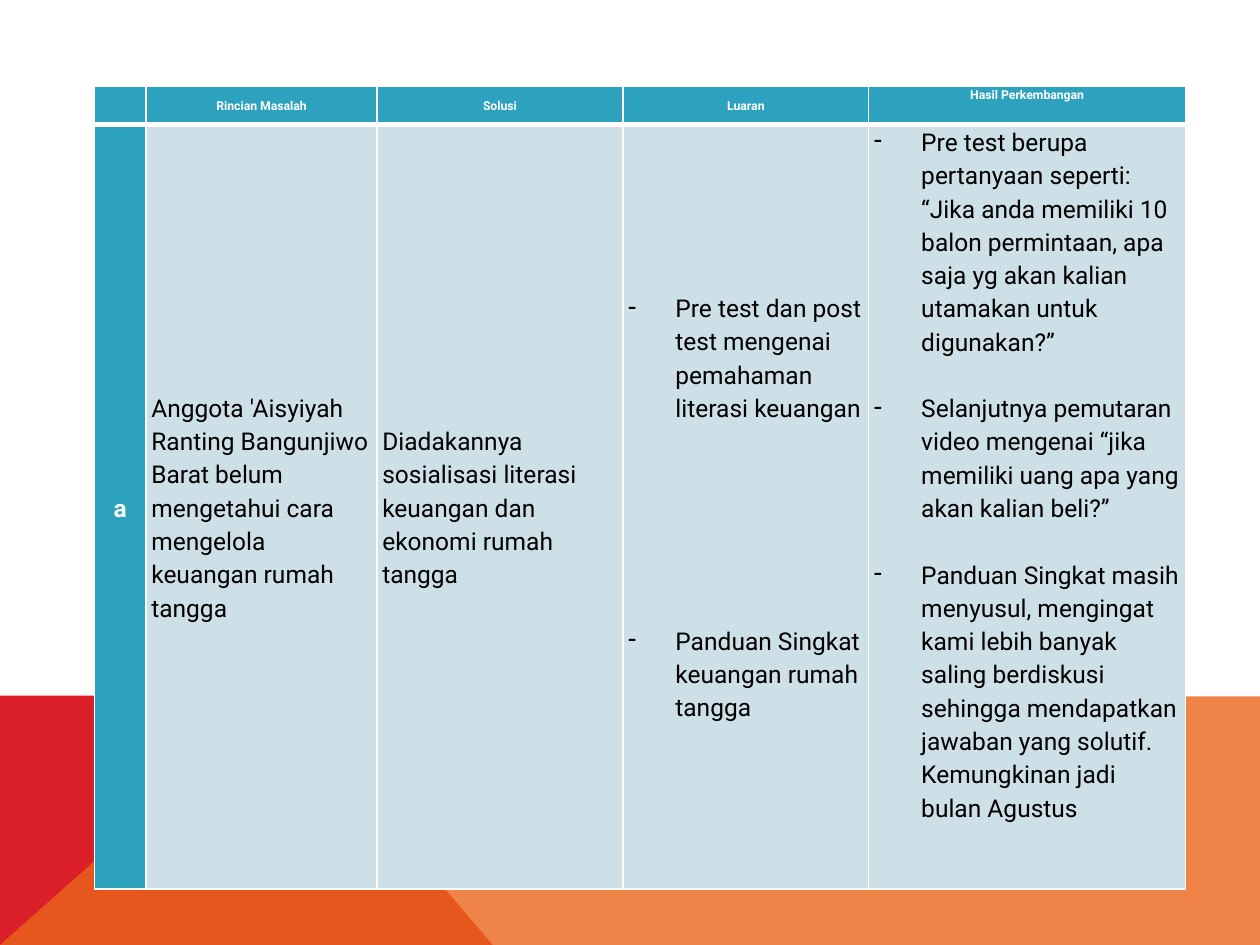
import pptx
import pptx.util
import pptx.dml.color
import pptx.enum.text
import pptx.oxml
import pptx.oxml.ns
from lxml import etree

Pt = pptx.util.Pt
RGB = pptx.dml.color.RGBColor.from_string
ALIGN = pptx.enum.text.PP_ALIGN
ANCHOR = pptx.enum.text.MSO_ANCHOR
qn = pptx.oxml.ns.qn

THEME = {
    "font": "Roboto", "head_size": 7, "body_size": 14,
    "red": "DA1F28", "orange": "EB641B", "teal": "2DA2BF",
    "pale": "CDE0E8", "white": "FFFFFF", "black": "000000",
}
LINE = 19  # height of one body line
INDENT = 27

prs = pptx.Presentation()
prs.slide_width, prs.slide_height = Pt(720), Pt(540)
s = prs.slides.add_slide(prs.slide_layouts[6])

# Background bands
bands = [
    ("red", 100, [(0, 540), (0, 397.5), (160.5, 397.5), (281.5, 540)]),
    ("orange", 80, [(0, 540), (160.5, 397.5), (720, 398), (720, 540)]),
]
for color, opacity, points in bands:
    fb = s.shapes.build_freeform(*[Pt(v) for v in points[0]], scale=1.0)
    fb.add_line_segments([(Pt(x), Pt(y)) for x, y in points[1:]], close=True)
    sp = fb.convert_to_shape()
    sp.shadow.inherit = False
    sp.fill.solid()
    sp.fill.fore_color.rgb = RGB(THEME[color])
    sp.line.fill.background()
    if opacity < 100:
        clr = sp._element.spPr.find(".//" + qn("a:srgbClr"))
        etree.SubElement(clr, qn("a:alpha"), val=str(opacity * 1000))

# Each body cell is a list of (text, blank lines above)
header = ["", "Rincian Masalah", "Solusi", "Luaran", "Hasil Perkembangan"]
body = [
    [("a", 0)],
    [("Anggota 'Aisyiyah Ranting Bangunjiwo Barat belum mengetahui cara "
      "mengelola keuangan rumah tangga", 0)],
    [("Diadakannya sosialisasi literasi keuangan dan ekonomi rumah tangga", 0)],
    [("Pre test dan post test mengenai pemahaman literasi keuangan", 0),
     ("Panduan Singkat keuangan rumah tangga", 6)],
    [("Pre test berupa pertanyaan seperti: “Jika anda memiliki 10 balon "
      "permintaan, apa saja yg akan kalian utamakan untuk digunakan?”", 0),
     ("Selanjutnya pemutaran video mengenai “jika memiliki uang apa yang "
      "akan kalian beli?”", 1),
     ("Panduan Singkat masih menyusul, mengingat kami lebih banyak saling "
      "berdiskusi sehingga mendapatkan jawaban yang solutif. Kemungkinan "
      "jadi bulan Agustus", 1)],
]
rows = [[[(text, 0)] for text in header], body]
widths = [29.5, 132, 140.5, 140.5, 181]
heights = [22, 437]

frame = s.shapes.add_table(2, 5, Pt(54), Pt(49), Pt(sum(widths)), Pt(sum(heights)))
table = frame.table
table.first_row = table.horz_banding = False
for col, width in zip(table.columns, widths):
    col.width = Pt(width)
for row, height in zip(table.rows, heights):
    row.height = Pt(height)


def add_borders(cell, widths):
    """Draw white borders, given as points per side."""
    tcPr = cell._tc.get_or_add_tcPr()
    for side, width in widths.items():
        ln = etree.SubElement(tcPr, qn("a:ln" + side), w=str(Pt(width)))
        fill = etree.SubElement(ln, qn("a:solidFill"))
        etree.SubElement(fill, qn("a:srgbClr"), val=THEME["white"])


for i, contents in enumerate(rows):
    for j, paragraphs in enumerate(contents):
        cell = table.cell(i, j)
        is_label = i == 0 or j == 0
        size = Pt(THEME["head_size" if i == 0 else "body_size"])
        add_borders(cell, {"L": 1, "R": 1, "T": 3 if i else 1, "B": 1 if i else 3})
        cell.fill.solid()
        cell.fill.fore_color.rgb = RGB(THEME["teal" if is_label else "pale"])
        cell.margin_left = cell.margin_right = Pt(3)
        cell.margin_top = cell.margin_bottom = 0
        cell.vertical_anchor = ANCHOR.TOP if j == 4 else ANCHOR.MIDDLE

        tf = cell.text_frame
        tf.text = "\n".join(text for text, _ in paragraphs)
        for p, (text, blank_lines) in zip(tf.paragraphs, paragraphs):
            p.alignment = ALIGN.CENTER if is_label else ALIGN.LEFT
            p.line_spacing = 1.15
            p.space_before = Pt(blank_lines * LINE)
            if i == 1 and j >= 3:
                pPr = p._p.get_or_add_pPr()
                pPr.set("marL", str(Pt(INDENT)))
                pPr.set("indent", str(Pt(-INDENT)))
                etree.SubElement(pPr, qn("a:buChar"), char="-")
            for r in p.runs:
                r.font.name = THEME["font"]
                r.font.size = size
                r.font.bold = is_label
                r.font.color.rgb = RGB(THEME["white" if is_label else "black"])
            if not text:  # keeps the empty header cell from stretching its row
                etree.SubElement(p._p, qn("a:endParaRPr"), sz=str(int(size.pt * 100)))

prs.save("out.pptx")
